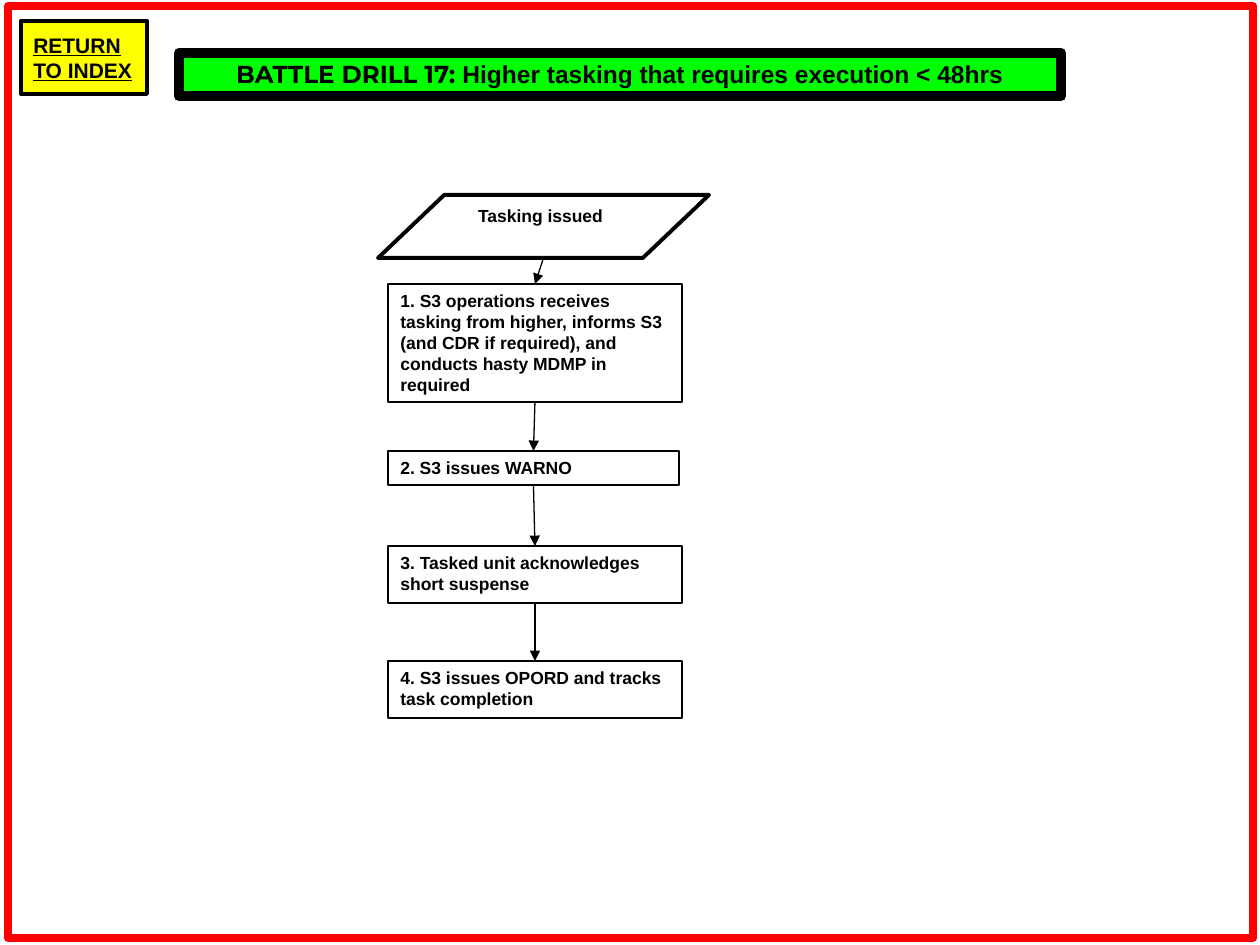
from lxml import etree
from pptx import Presentation, util as u
from pptx.dml.color import RGBColor
from pptx.enum import shapes, text
from pptx.oxml.ns import qn

THEME = {
    "black": "000000", "red": "FF0000", "yellow": "FFFF00", "green": "00FF00",
    "font": "Arial", "head": "Montserrat",
    "title": 14, "index": 12, "body": 10,
}
SIZE = (1260, 945)
FRAME = (8, 6, 1245, 932)
INDEX = (21, 21, 126, 73)
TITLE = (179, 53, 882, 43)
LABEL = (420, 199, 241, 34)
START = (378, 195, 331, 63)
LEFT = 388
# text, top, width, height
STEPS = [
    ("1. S3 operations receives tasking from higher, informs S3 "
     "(and CDR if required), and conducts hasty MDMP in required", 284, 294, 118),
    ("2. S3 issues WARNO", 451, 291, 34),
    ("3. Tasked unit acknowledges short suspense", 546, 294, 57),
    ("4. S3 issues OPORD and tracks task completion", 661, 294, 57),
]


def px(n):
    return u.Emu(round(n * 914400 / 126))


def color(name):
    return RGBColor.from_string(THEME[name])


def draw(kind, box, width, fill=None, line="black"):
    shape = slide.shapes.add_shape(kind, *map(px, box))
    shape.shadow.inherit = False
    if fill:
        shape.fill.solid()
        shape.fill.fore_color.rgb = color(fill)
    else:
        shape.fill.background()
    shape.line.color.rgb = color(line)
    shape.line.width = u.Pt(width)
    return shape


def write(shape, paras, size, align="LEFT", anchor="TOP", wrap=True, under=None):
    """Fill a shape with paragraphs, each a list of (words, font key) runs."""
    frame = shape.text_frame
    frame.word_wrap = wrap
    frame.vertical_anchor = text.MSO_ANCHOR[anchor]
    look = {"size": u.Pt(THEME[size]), "bold": True, "underline": under}
    for i, runs in enumerate(paras):
        para = frame.add_paragraph() if i else frame.paragraphs[0]
        para.alignment = text.PP_ALIGN[align]
        for words, face in runs:
            run = para.add_run()
            run.text = words
            for key, value in {**look, "name": THEME[face]}.items():
                setattr(run.font, key, value)
            run.font.color.rgb = color("black")


def arrow(start, end, low, high):
    """Point from the low side of start to the top of end."""
    line = slide.shapes.add_connector(shapes.MSO_CONNECTOR.STRAIGHT, *map(px, low + high))
    if start:
        line.begin_connect(start, 2)
    line.end_connect(end, 0)
    line.line.color.rgb = color("black")
    line.line.width = u.Pt(0.75)
    etree.SubElement(line.line._get_or_add_ln(), qn("a:tailEnd"), type="triangle")
    etree.SubElement(line._element.spPr, qn("a:effectLst"))


deck = Presentation()
deck.slide_width, deck.slide_height = map(px, SIZE)
slide = deck.slides.add_slide(deck.slide_layouts[6])
RECT = shapes.MSO_SHAPE.RECTANGLE

draw(RECT, FRAME, 4.5, line="red")
write(draw(RECT, INDEX, 2.25, "yellow"),
      [[("RETURN", "font")], [("TO INDEX", "font")]],
      "index", anchor="MIDDLE", wrap=False, under=True)
write(draw(RECT, TITLE, 6, "green"),
      [[("BATTLE DRILL 17: ", "head"),
        ("Higher tasking that requires execution < 48hrs", "font")]],
      "title", "CENTER")

write(slide.shapes.add_textbox(*map(px, LABEL)),
      [[("Tasking issued", "font")]], "body", "CENTER")
draw(shapes.MSO_SHAPE.FLOWCHART_DATA, START, 2.25)

last = None
low = (START[0] + START[2] / 2, START[1] + START[3])
for words, top, wide, high in STEPS:
    step = draw(RECT, (LEFT, top, wide, high), 1)
    write(step, [[(words, "font")]], "body")
    mid = LEFT + wide / 2
    arrow(last, step, low, (mid, top))
    last, low = step, (mid, top + high)

deck.save("out.pptx")
